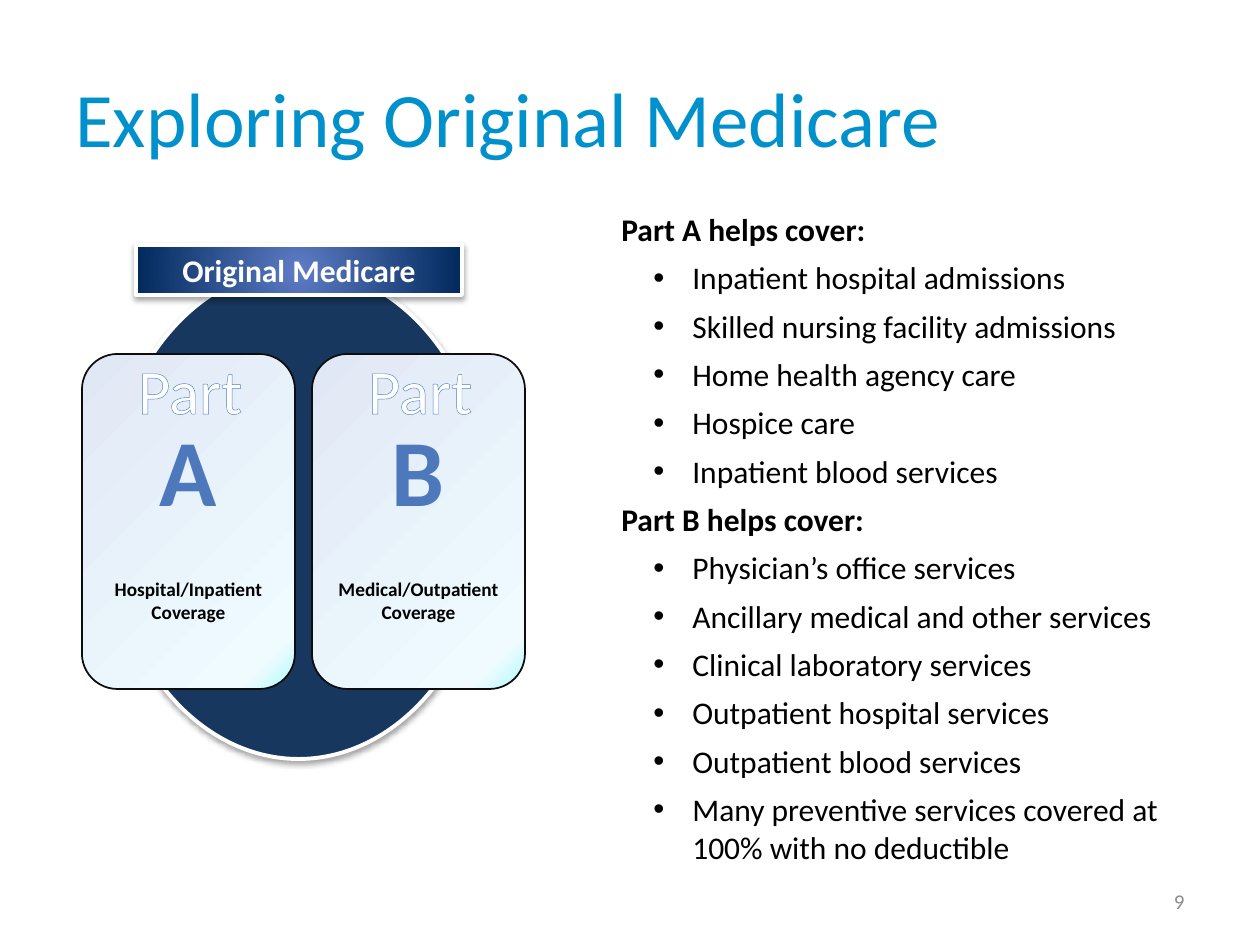
from pptx import Presentation
from pptx.dml.color import RGBColor
from pptx.enum.shapes import MSO_SHAPE as Shape
from pptx.enum.text import MSO_ANCHOR as Anchor, PP_ALIGN as Align
from pptx.oxml import parse_xml
from pptx.oxml.ns import nsdecls, qn
from pptx.util import Emu, Pt

EMU_PER_INCH = 914400
PX_PER_INCH = 126
FONT = "Calibri"
WHITE = RGBColor(0xFF, 0xFF, 0xFF)
BLACK = RGBColor(0, 0, 0)
BORDER = RGBColor(0x0D, 0x0D, 0x0D)
TITLE_BLUE = RGBColor(0x00, 0x91, 0xCC)
NAVY = RGBColor(0x17, 0x37, 0x5E)
LETTER_BLUE = RGBColor(0x4D, 0x79, 0xBC)
OUTLINE_BLUE = RGBColor(0x4F, 0x81, 0xBD)
GREY = RGBColor(0x8C, 0x8C, 0x8C)
CARD_STOPS = [
    (0, RGBColor(0xAB, 0xFB, 0xFD)),
    (10, RGBColor(0xEF, 0xFB, 0xFF)),
    (100, RGBColor(0xE1, 0xE8, 0xF5)),
]
BANNER_STOPS = [(0, RGBColor(0x5E, 0x7C, 0xC5)), (100, RGBColor(0x00, 0x29, 0x5C))]
CORNER = (100, 100, 0, 0)
CENTRE = (50, 50, 50, 50)

CARDS = [("A", "Hospital/Inpatient Coverage"), ("B", "Medical/Outpatient Coverage")]
CARD_LEFT, CARD_STEP = 82, 230
COVERAGE = {
    "Part A helps cover:": [
        "Inpatient hospital admissions",
        "Skilled nursing facility admissions",
        "Home health agency care",
        "Hospice care",
        "Inpatient blood services",
    ],
    "Part B helps cover:": [
        "Physician’s office services",
        "Ancillary medical and other services",
        "Clinical laboratory services",
        "Outpatient hospital services",
        "Outpatient blood services",
        "Many preventive services covered at 100% with no deductible",
    ],
}


def px(length):
    """Turn pixels into EMU."""
    return Emu(round(length * EMU_PER_INCH / PX_PER_INCH))


def add_span(para, text, size, color, bold=False):
    """Add one formatted run to a paragraph."""
    span = para.add_run()
    span.text = text
    span.font.name = FONT
    span.font.size = Pt(size)
    span.font.bold = bold
    span.font.color.rgb = color
    return span


def add_box(page, place, anchor=Anchor.TOP, wrap=True):
    """Add an empty text box and return its text frame."""
    frame = page.shapes.add_textbox(*map(px, place)).text_frame
    frame.word_wrap = wrap
    frame.vertical_anchor = anchor
    return frame


def add_label(page, place, text, size, color, bold=False,
              align=Align.CENTER, anchor=Anchor.TOP, wrap=True):
    """Add a text box holding a single run."""
    para = add_box(page, place, anchor, wrap).paragraphs[0]
    para.alignment = align
    return add_span(para, text, size, color, bold)


def add_figure(page, kind, place, line_color, line_width):
    """Add a preset shape with a border and no theme shadow."""
    shape = page.shapes.add_shape(kind, *map(px, place))
    shape.shadow.inherit = False
    shape.line.color.rgb = line_color
    shape.line.width = Pt(line_width)
    return shape


def fill_radial(shape, stops, focus):
    """Fill a shape with a circular gradient around the focus rectangle."""
    marks = "".join(
        f'<a:gs pos="{pos * 1000}"><a:srgbClr val="{color}"/></a:gs>' for pos, color in stops
    )
    sides = " ".join(f'{side}="{share * 1000}"' for side, share in zip("ltrb", focus))
    gradient = parse_xml(
        f'<a:gradFill {nsdecls("a")} rotWithShape="1"><a:gsLst>{marks}</a:gsLst>'
        f'<a:path path="circle"><a:fillToRect {sides}/></a:path></a:gradFill>'
    )
    shape.element.spPr.find(qn("a:prstGeom")).addnext(gradient)


def drop_shadow(shape):
    """Give a shape a soft shadow below it."""
    shape.element.spPr.find(qn("a:effectLst")).append(parse_xml(
        f'<a:outerShdw {nsdecls("a")} blurRad="{Pt(3.1)}" dist="{Pt(1.8)}" dir="5400000" '
        'rotWithShape="0"><a:srgbClr val="000000"><a:alpha val="35000"/></a:srgbClr>'
        '</a:outerShdw>'
    ))


def outline_span(span, color, width):
    """Draw an outline around the letters of a run."""
    span.font.element.insert(0, parse_xml(
        f'<a:ln {nsdecls("a")} w="{Pt(width)}"><a:solidFill>'
        f'<a:srgbClr val="{color}"/></a:solidFill></a:ln>'
    )) if hasattr(span.font, "element") else span._r.get_or_add_rPr().insert(0, parse_xml(
        f'<a:ln {nsdecls("a")} w="{Pt(width)}"><a:solidFill>'
        f'<a:srgbClr val="{color}"/></a:solidFill></a:ln>'
    ))


def add_card(page, left, letter, caption):
    """Add one rounded card for a part of the programme."""
    card = add_figure(page, Shape.ROUNDED_RECTANGLE, (left, 354, 213, 335), BORDER, 1)
    fill_radial(card, CARD_STOPS, CORNER)
    add_label(page, (left, 571, 213, 87), caption, 11, BLACK, bold=True)
    add_label(page, (left + 26, 406, 161, 146), letter, 54, LETTER_BLUE, bold=True)
    part = add_label(page, (left + 29, 345, 158, 102), "Part", 36, WHITE, wrap=False)
    outline_span(part, OUTLINE_BLUE, 0.8)


def add_banner(page):
    """Add the heading bar above the cards."""
    banner = add_figure(page, Shape.RECTANGLE, (136, 245, 326, 50), WHITE, 2.25)
    fill_radial(banner, BANNER_STOPS, CENTRE)
    drop_shadow(banner)
    banner.text_frame.vertical_anchor = Anchor.MIDDLE
    para = banner.text_frame.paragraphs[0]
    para.alignment = Align.CENTER
    add_span(para, "Original Medicare", 18, WHITE, bold=True)


def set_bullet(para):
    """Indent a paragraph and mark it with a bullet."""
    props = para._p.get_or_add_pPr()
    props.set("marL", str(px(71)))
    props.set("indent", str(px(-39)))
    props.append(parse_xml(f'<a:buFont {nsdecls("a")} typeface="Arial"/>'))
    props.append(parse_xml(f'<a:buChar {nsdecls("a")} char="•"/>'))


def add_coverage(page):
    """Add the headed bullet lists."""
    frame = add_box(page, (609, 204, 567, 674))
    lines = [
        (text, text == heading)
        for heading, items in COVERAGE.items()
        for text in [heading, *items]
    ]
    for index, (text, is_heading) in enumerate(lines):
        para = frame.add_paragraph() if index else frame.paragraphs[0]
        para.space_before = para.space_after = Pt(3)
        if not is_heading:
            set_bullet(para)
        add_span(para, text, 18, BLACK, bold=is_heading)


def main():
    """Build the slide and save it."""
    deck = Presentation()
    deck.slide_width, deck.slide_height = px(1260), px(945)
    page = deck.slides.add_slide(deck.slide_layouts[6])
    add_label(page, (63, 38, 1134, 158), "Exploring Original Medicare", 44, TITLE_BLUE,
              align=Align.LEFT, anchor=Anchor.MIDDLE)
    add_label(page, (903, 876, 294, 50), "9", 12, GREY,
              align=Align.RIGHT, anchor=Anchor.MIDDLE)
    oval = add_figure(page, Shape.OVAL, (107, 268, 383, 491), WHITE, 2.25)
    oval.fill.solid()
    oval.fill.fore_color.rgb = NAVY
    drop_shadow(oval)
    for index, (letter, caption) in enumerate(CARDS):
        add_card(page, CARD_LEFT + index * CARD_STEP, letter, caption)
    add_banner(page)
    add_coverage(page)
    deck.save("out.pptx")


if __name__ == "__main__":
    main()
